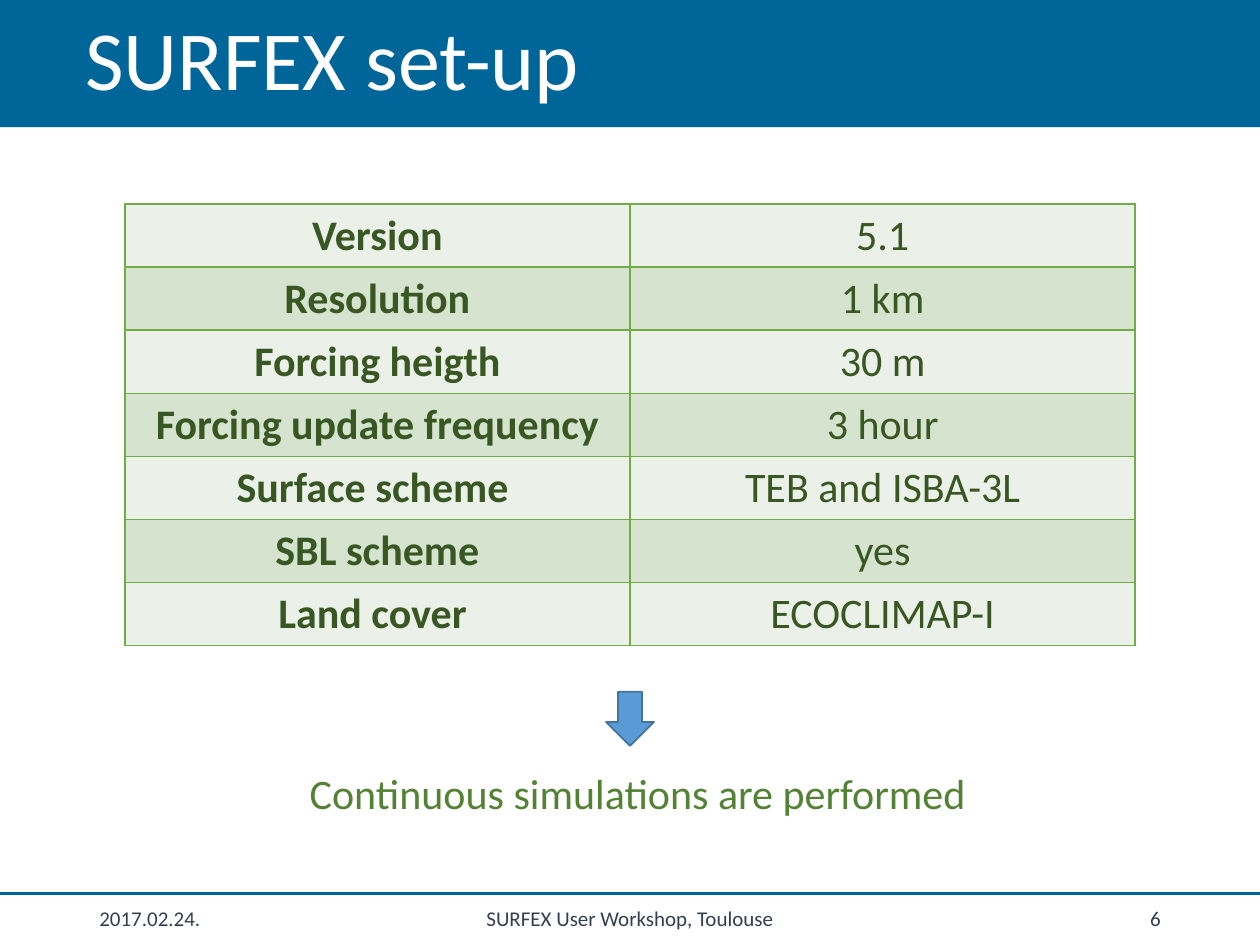
from lxml.etree import SubElement
from pptx import Presentation
from pptx.dml.color import RGBColor
from pptx.enum.shapes import MSO_CONNECTOR, MSO_SHAPE
from pptx.enum.text import MSO_ANCHOR, PP_ALIGN
from pptx.oxml import parse_xml
from pptx.oxml.ns import nsdecls, qn
from pptx.util import Inches, Pt

FONT = "Calibri"
COLORS = {
    "banner": "006699",
    "title": "FFFFFF",
    "footer": "333F50",
    "border": "70AD47",
    "cell_text": "385723",
    "light_row": "EBF1E9",
    "dark_row": "D5E3CF",
    "arrow": "5B9BD5",
    "arrow_line": "43739E",
    "conclusion": "548235",
}
SETTINGS = [
    ("Version", "5.1"),
    ("Resolution", "1 km"),
    ("Forcing heigth", "30 m"),
    ("Forcing update frequency", "3 hour"),
    ("Surface scheme ", "TEB and ISBA-3L"),
    ("SBL scheme", "yes"),
    ("Land cover ", "ECOCLIMAP-I"),
]
FOOTER_TOP = 7.09


def color(name):
    return RGBColor.from_string(COLORS[name])


def write(frame, text, size, color_name, align=PP_ALIGN.LEFT, bold=False):
    frame.text = text
    para = frame.paragraphs[0]
    para.alignment = align
    for span in para.runs:
        span.font.name = FONT
        span.font.size = Pt(size)
        span.font.bold = bold
        span.font.color.rgb = color(color_name)
    return para


def add_text(page, area, text, size, color_name, align=PP_ALIGN.LEFT,
             anchor=MSO_ANCHOR.TOP, wrap=True):
    box = page.shapes.add_textbox(*map(Inches, area))
    box.text_frame.word_wrap = wrap
    box.text_frame.vertical_anchor = anchor
    write(box.text_frame, text, size, color_name, align)


def add_filled_shape(page, kind, area, fill, line=None):
    shape = page.shapes.add_shape(kind, *map(Inches, area))
    shape.shadow.inherit = False
    shape.fill.solid()
    shape.fill.fore_color.rgb = color(fill)
    if line:
        shape.line.color.rgb = color(line)
        shape.line.width = Pt(1)
    else:
        shape.line.fill.background()
    return shape


def add_banner(page, text):
    banner = add_filled_shape(page, MSO_SHAPE.RECTANGLE, (0, 0, 10, 1.01), "banner")
    banner.text_frame.vertical_anchor = MSO_ANCHOR.MIDDLE
    para = write(banner.text_frame, text, 48, "title")
    para.line_spacing = 0.9
    para._p.get_or_add_pPr().set("marL", str(Inches(0.58)))


def add_footer(page):
    rule = page.shapes.add_connector(MSO_CONNECTOR.STRAIGHT, 0, Inches(FOOTER_TOP),
                                     Inches(10), Inches(FOOTER_TOP))
    rule.line.color.rgb = color("banner")
    rule.line.width = Pt(1.5)
    SubElement(rule._element.spPr, qn("a:effectLst"))
    for left, width, text, align in [
        (0.69, 2.25, "2017.02.24.", PP_ALIGN.LEFT),
        (3.31, 3.38, "SURFEX User Workshop, Toulouse", PP_ALIGN.CENTER),
        (7.06, 2.25, "6", PP_ALIGN.RIGHT),
    ]:
        add_text(page, (left, FOOTER_TOP, width, 0.4), text, 12, "footer",
                 align, MSO_ANCHOR.MIDDLE)


def set_borders(cell):
    properties = cell._tc.get_or_add_tcPr()
    for position, side in enumerate(("lnL", "lnR", "lnT", "lnB")):
        properties.insert(position, parse_xml(
            f'<a:{side} {nsdecls("a")} w="{Pt(1)}"><a:solidFill>'
            f'<a:srgbClr val="{COLORS["border"]}"/></a:solidFill></a:{side}>'))


def add_settings_table(page):
    area = map(Inches, (0.99, 1.62, 8.02, 3.5))
    table = page.shapes.add_table(len(SETTINGS), 2, *area).table
    table.first_row = False
    table.horz_banding = False
    for row, values in enumerate(SETTINGS):
        for column, text in enumerate(values):
            cell = table.cell(row, column)
            cell.fill.solid()
            cell.fill.fore_color.rgb = color("dark_row" if row % 2 else "light_row")
            set_borders(cell)
            write(cell.text_frame, text, 24, "cell_text", PP_ALIGN.CENTER,
                  bold=column == 0)


def main():
    deck = Presentation()
    deck.slide_width, deck.slide_height = Inches(10), Inches(7.5)
    page = deck.slides.add_slide(deck.slide_layouts[6])
    add_footer(page)
    add_banner(page, "SURFEX set-up")
    add_settings_table(page)
    add_filled_shape(page, MSO_SHAPE.DOWN_ARROW, (4.81, 5.49, 0.38, 0.43),
                     "arrow", "arrow_line")
    add_text(page, (2.36, 6.04, 5.46, 0.5), "Continuous simulations are performed",
             24, "conclusion", wrap=False)
    deck.save("out.pptx")


if __name__ == "__main__":
    main()
